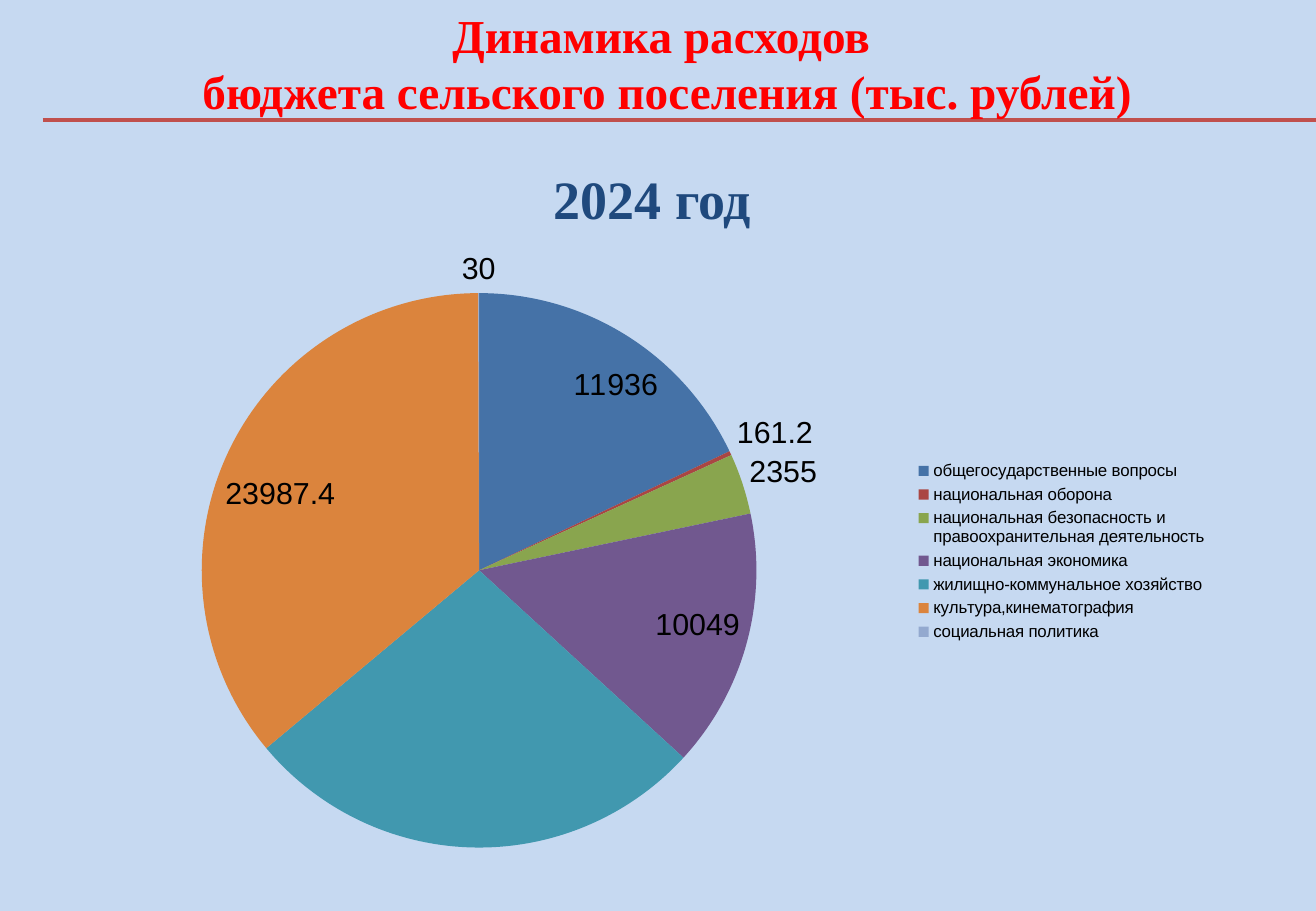
from lxml import etree
from pptx import Presentation
from pptx.chart.data import CategoryChartData
from pptx.dml.color import RGBColor
from pptx.enum.chart import XL_CHART_TYPE as ChartType
from pptx.enum.chart import XL_LABEL_POSITION as LabelPos
from pptx.enum.chart import XL_LEGEND_POSITION as LegendPos
from pptx.enum.shapes import MSO_CONNECTOR as Connector
from pptx.enum.text import MSO_AUTO_SIZE as AutoSize
from pptx.enum.text import PP_ALIGN as Align
from pptx.oxml.ns import qn
from pptx.util import Inches, Pt

BACKGROUND = RGBColor(0xC6, 0xD9, 0xF1)
RED = RGBColor(0xFF, 0x00, 0x00)
NAVY = RGBColor(0x1F, 0x49, 0x7D)
RULE = RGBColor(0xC0, 0x50, 0x4D)
BLACK = RGBColor(0x00, 0x00, 0x00)

EXPENSES = [
    ("общегосударственные вопросы", 11936, RGBColor(0x45, 0x72, 0xA7)),
    ("национальная оборона", 161.2, RGBColor(0xAA, 0x46, 0x43)),
    ("национальная безопасность и правоохранительная деятельность", 2355,
     RGBColor(0x89, 0xA5, 0x4E)),
    ("национальная экономика", 10049, RGBColor(0x71, 0x58, 0x8F)),
    ("жилищно-коммунальное хозяйство", 18037.2, RGBColor(0x41, 0x98, 0xAF)),
    ("культура,кинематография", 23987.4, RGBColor(0xDB, 0x84, 0x3D)),
    ("социальная политика", 30, RGBColor(0x93, 0xA9, 0xCF)),
]
UNLABELLED = 4


def add_heading(s, box, text, size, color, wrap):
    tb = s.shapes.add_textbox(*map(Inches, box))
    tf = tb.text_frame
    tf.word_wrap = wrap
    tf.auto_size = AutoSize.SHAPE_TO_FIT_TEXT
    p = tf.paragraphs[0]
    p.text = text
    p.alignment = Align.CENTER
    p.font.name = "Times New Roman"
    p.font.size = Pt(size)
    p.font.bold = True
    p.font.color.rgb = color


def set_layout(element, index, shares, target=None):
    """Place a chart part by its x, y, width and height as shares of the chart."""
    for old in element.findall(qn("c:layout")):
        element.remove(old)
    layout = etree.Element(qn("c:layout"))
    element.insert(index, layout)
    manual = etree.SubElement(layout, qn("c:manualLayout"))
    settings = [("layoutTarget", target)] if target else []
    settings += [("xMode", "edge"), ("yMode", "edge"), *zip("xywh", shares)]
    for tag, value in settings:
        etree.SubElement(manual, qn(f"c:{tag}")).set("val", str(value))


prs = Presentation()
prs.slide_width, prs.slide_height = Inches(10.83), Inches(7.5)
s = prs.slides.add_slide(prs.slide_layouts[6])
s.background.fill.solid()
s.background.fill.fore_color.rgb = BACKGROUND

rule = s.shapes.add_connector(
    Connector.STRAIGHT, Inches(0.35), Inches(0.99), prs.slide_width, Inches(0.99))
rule.line.color.rgb = RULE
rule.line.width = Pt(2.5)
etree.SubElement(rule._element.spPr, qn("a:effectLst"))

add_heading(s, (0.46, 0, 10.06, 1.04),
            "Динамика расходов \vбюджета сельского поселения (тыс. рублей)",
            28, RED, True)
add_heading(s, (4.39, 1.31, 1.96, 0.64), "2024 год", 32, NAVY, False)

data = CategoryChartData()
data.categories = [name for name, _, _ in EXPENSES]
data.add_series("Series 1", [value for _, value, _ in EXPENSES])
chart = s.shapes.add_chart(
    ChartType.PIE, *map(Inches, (0.93, 1.94, 9.13, 5.2)), data).chart
chart.has_title = False
chart.font.name = "Arial"
chart.font.size = Pt(18)
chart.font.color.rgb = BLACK

chart.has_legend = True
legend = chart.legend
legend.position = LegendPos.RIGHT
legend.include_in_layout = False
legend.font.name = "Arial"
legend.font.size = Pt(10)
legend.font.color.rgb = BLACK
set_layout(legend._element, 1, (0.72, 0.35, 0.27, 0.3))
set_layout(chart._chartSpace.chart.plotArea, 0, (0.08, 0.09, 0.5, 0.88), "inner")

plot = chart.plots[0]
plot.vary_by_categories = True
series = plot.series[0]
for i, (_, _, color) in enumerate(EXPENSES):
    fill = series.points[i].format.fill
    fill.solid()
    fill.fore_color.rgb = color

labels = series.data_labels
labels.show_value = True
labels.position = LabelPos.BEST_FIT
hidden = etree.Element(qn("c:dLbl"))
etree.SubElement(hidden, qn("c:idx")).set("val", str(UNLABELLED))
etree.SubElement(hidden, qn("c:delete")).set("val", "1")
labels._element.insert(0, hidden)

prs.save("out.pptx")
